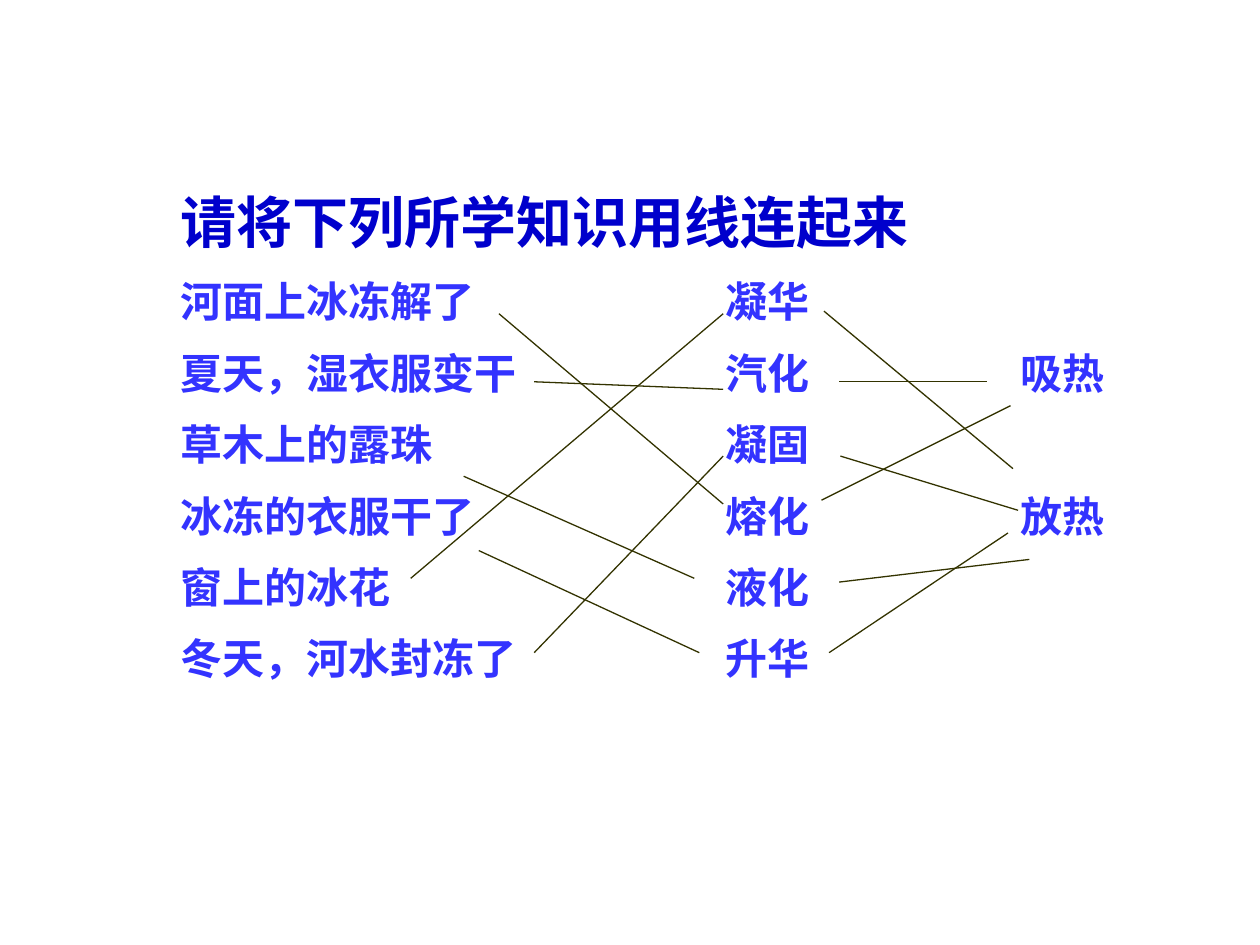
from pptx import Presentation
from pptx.dml.color import RGBColor
from pptx.enum.shapes import MSO_CONNECTOR as Conn
from pptx.enum.text import MSO_ANCHOR as Anchor, MSO_AUTO_SIZE as AutoSize, PP_ALIGN as Align
from pptx.oxml.ns import qn
from pptx.util import Inches, Pt
from lxml.etree import SubElement

COLORS = {"title": "0000CC", "text": "3333FF", "line": "333300"}
FONT = "Times New Roman"
TITLE = "请将下列所学知识用线连起来"
PHENOMENA = ["河面上冰冻解了", "夏天，湿衣服变干", "草木上的露珠",
             "冰冻的衣服干了", "窗上的冰花", "冬天，河水封冻了"]
CHANGES = ["凝华", "汽化", "凝固", "熔化", "液化", "升华"]
HEAT = ["吸热", "放热"]
TOP = 2.14
ROW_GAP = 12  # points between rows
ROW_PITCH = 40.8  # points from one row to the next
PHENOMENON_LINES = [
    (3.96, 2.49, 5.74, 4), (4.24, 3.03, 5.74, 3.09), (3.68, 3.78, 5.51, 4.59),
    (3.8, 4.37, 5.55, 5.18), (3.26, 4.59, 5.74, 2.49), (4.24, 5.18, 5.74, 3.62),
]
HEAT_LINES = [
    (6.54, 2.47, 8.04, 3.72), (6.66, 3.03, 7.83, 3.03), (6.67, 3.62, 8.08, 4.05),
    (6.52, 3.97, 8.02, 3.22), (6.66, 4.62, 8.17, 4.44), (6.58, 5.18, 8, 4.23),
]


class MatchingSlide:
    def __init__(self, prs):
        self.s = prs.slides.add_slide(prs.slide_layouts[1])

    def place(self, sp, left, top, width, height):
        sp.left, sp.top, sp.width, sp.height = map(Inches, (left, top, width, height))
        tf = sp.text_frame
        tf.word_wrap = True
        tf.auto_size = AutoSize.NONE
        tf.vertical_anchor = Anchor.TOP
        return tf

    def run(self, p, text, size, color):
        r = p.add_run()
        r.text = text
        r.font.name = FONT
        r.font.size = Pt(size)
        r.font.bold = True
        r.font.color.rgb = RGBColor.from_string(COLORS[color])

    def title(self, text, *box):
        p = self.place(self.s.shapes.title, *box).paragraphs[0]
        p.alignment = Align.LEFT
        self.run(p, text, 32, "title")

    def fill_column(self, sp, words, gap, *box):
        tf = self.place(sp, *box)
        for i, word in enumerate(words):
            p = tf.paragraphs[0] if i == 0 else tf.add_paragraph()
            p.space_before = Pt(gap if i else 0)
            pPr = p._p.get_or_add_pPr()
            pPr.set("marL", "0")
            pPr.set("indent", "0")
            SubElement(pPr, qn("a:buNone"))
            self.run(p, word, 24, "text")

    def body(self, words, gap, *box):
        self.fill_column(self.s.placeholders[1], words, gap, *box)

    def text(self, words, gap, *box):
        sp = self.s.shapes.add_textbox(*map(Inches, box))
        self.fill_column(sp, words, gap, *box)

    def line(self, *ends):
        c = self.s.shapes.add_connector(Conn.STRAIGHT, *map(Inches, ends))
        c.line.color.rgb = RGBColor.from_string(COLORS["line"])
        c.line.width = Pt(0.75)
        SubElement(c._element.spPr, qn("a:effectLst"))


def main():
    prs = Presentation()
    prs.slide_width, prs.slide_height = Inches(10), Inches(7.5)
    slide = MatchingSlide(prs)
    slide.title(TITLE, 1.33, 1.44, 8.25, 0.7)
    slide.body(PHENOMENA, ROW_GAP, 1.33, TOP, 3.2, 4.18)
    slide.text(CHANGES, ROW_GAP, 5.66, TOP, 1.2, 4.18)
    # The heat words stand on the second and fourth rows.
    slide.text(HEAT, ROW_GAP + ROW_PITCH, 8, TOP + ROW_PITCH / 72, 1.2, 1.8)
    for ends in PHENOMENON_LINES + HEAT_LINES:
        slide.line(*ends)
    prs.save("out.pptx")


if __name__ == "__main__":
    main()
